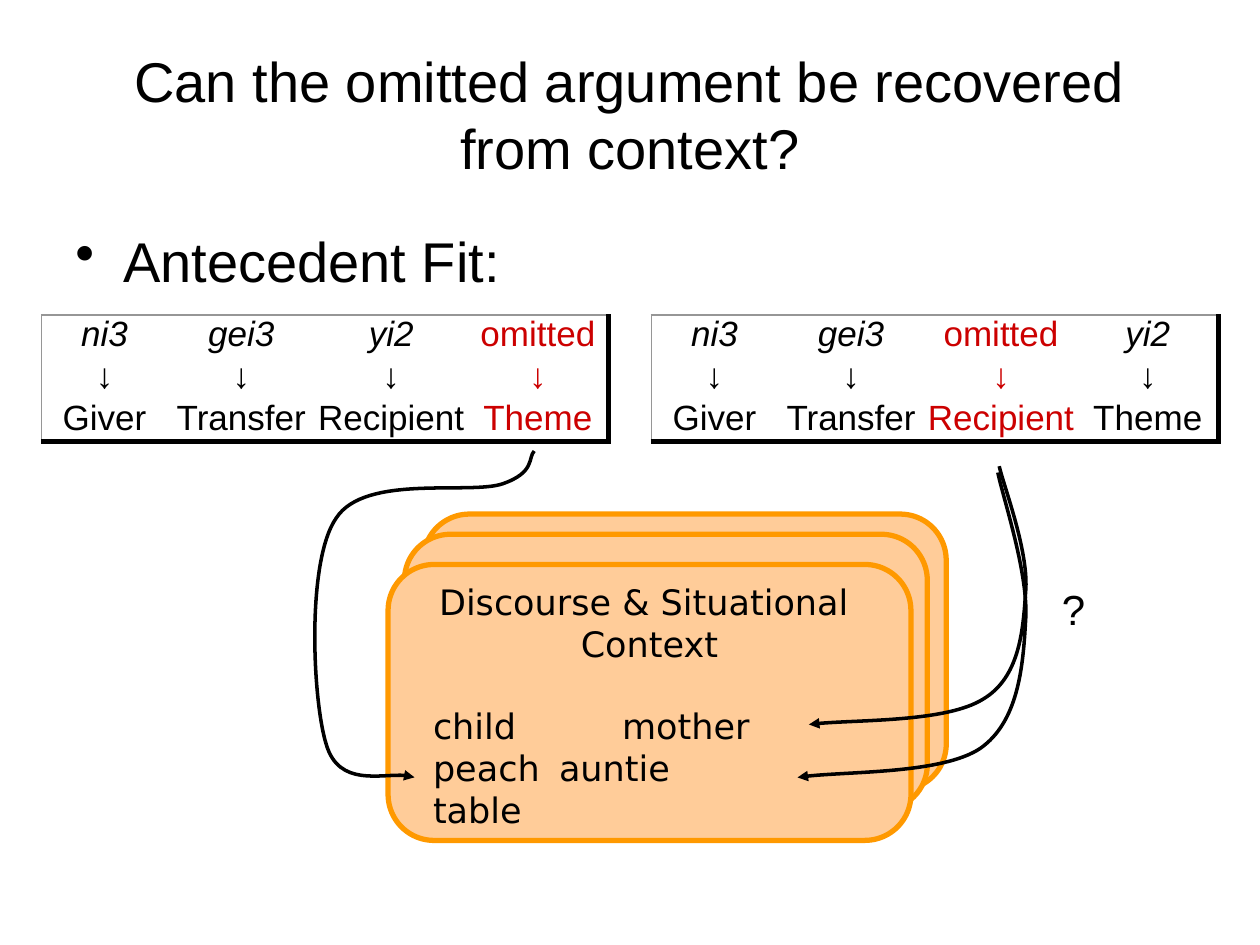
from dataclasses import dataclass

from lxml import etree
from pptx import Presentation
from pptx.dml.color import RGBColor
from pptx.enum.shapes import MSO_SHAPE as Shape
from pptx.enum.text import MSO_ANCHOR as Anchor, PP_ALIGN as Align
from pptx.oxml import parse_xml
from pptx.oxml.ns import nsdecls, qn
from pptx.util import Inches, Pt


@dataclass(frozen=True)
class Theme:
    black: str = "000000"
    red: str = "CC0000"
    gray: str = "969696"
    card: str = "FFCC99"
    card_edge: str = "FF9900"
    sans: str = "Arial"
    card_font: str = "DejaVu Sans"
    heading: int = 32
    question: int = 24
    body: int = 20


theme = Theme()


def write(paragraph, text, size, color=theme.black, name=theme.sans, italic=False):
    """Fill a paragraph with text; a vertical tab is a line break."""
    paragraph.text = text
    for run in paragraph.runs:
        font_format = {"size": Pt(size), "name": name, "italic": italic}
        for attribute, value in font_format.items():
            setattr(run.font, attribute, value)
        run.font.color.rgb = RGBColor.from_string(color)


def set_border(cell, side, position, border):
    """Draw one cell side, or hide it when border is None."""
    if border:
        color, width = border
        fill = f'<a:solidFill><a:srgbClr val="{color}"/></a:solidFill>'
    else:
        width, fill = 0, "<a:noFill/>"
    xml = f'<a:{side} {nsdecls("a")} w="{Pt(width)}">{fill}</a:{side}>'
    cell._tc.get_or_add_tcPr().insert(position, parse_xml(xml))


presentation = Presentation()
presentation.slide_width = Inches(10)
presentation.slide_height = Inches(7.5)
slide = presentation.slides.add_slide(presentation.slide_layouts[6])
shapes = slide.shapes

# Title, bullet line and question mark
labels = [
    ("Can the omitted argument be recovered from context?",
     (0.5, 0.3, 9, 1.2), theme.heading, Align.CENTER, Anchor.MIDDLE, True),
    ("Antecedent Fit:", (0.5, 1.75, 9, 0.75), theme.heading, Align.LEFT, Anchor.TOP, True),
    ("?", (8.33, 4.58, 0.39, 0.5), theme.question, Align.LEFT, Anchor.TOP, False),
]
for text, place, size, alignment, anchor, wrap in labels:
    box = shapes.add_textbox(*map(Inches, place))
    frame = box.text_frame
    frame.word_wrap = wrap
    frame.vertical_anchor = anchor
    paragraph = frame.paragraphs[0]
    paragraph.alignment = alignment
    write(paragraph, text, size)
    if text.startswith("Antecedent"):
        paragraph.space_before = Pt(3)
        properties = paragraph._p.get_or_add_pPr()
        properties.set("marL", str(Inches(0.38)))
        properties.set("indent", str(-Inches(0.38)))
        etree.SubElement(properties, qn("a:buChar")).set("char", "•")

# Word-to-role tables, each with one omitted argument
roles = ["Giver", "Transfer", "Recipient", "Theme"]
column_widths = [1, 1.17, 1.21, 1.12]
row_height = 0.31
thin, thick = (theme.gray, 1), (theme.black, 3)
for left, words in [
    (0.33, ["ni3", "gei3", "yi2", "omitted"]),
    (5.17, ["ni3", "gei3", "omitted", "yi2"]),
]:
    rows = [words, ["↓"] * len(roles), roles]
    table = shapes.add_table(
        len(rows), len(roles), Inches(left), Inches(2.5),
        Inches(sum(column_widths)), Inches(row_height * len(rows)),
    ).table
    table.first_row = table.horz_banding = False
    for column, width in zip(table.columns, column_widths):
        column.width = Inches(width)
    for i, row in enumerate(rows):
        table.rows[i].height = Inches(row_height)
        for j, text in enumerate(row):
            cell = table.cell(i, j)
            cell.fill.background()
            for side in ("left", "right", "top", "bottom"):
                setattr(cell, f"margin_{side}", 0)
            omitted = words[j] == "omitted"
            paragraph = cell.text_frame.paragraphs[0]
            paragraph.alignment = Align.CENTER
            write(paragraph, text, theme.body, theme.red if omitted else theme.black,
                  italic=i == 0 and not omitted)
            borders = {
                "lnL": thin if j == 0 else None,
                "lnR": thick if j == len(roles) - 1 else None,
                "lnT": thin if i == 0 else None,
                "lnB": thick if i == len(rows) - 1 else None,
            }
            for position, (side, border) in enumerate(borders.items()):
                set_border(cell, side, position, border)

# Stack of context cards; the front one carries the text
stack = shapes.add_group_shape()
for left, top in [(3.36, 4.08), (3.21, 4.24), (3.08, 4.48)]:
    card = stack.shapes.add_shape(
        Shape.ROUNDED_RECTANGLE, Inches(left), Inches(top), Inches(4.15), Inches(2.19))
    card.shadow.inherit = False
    card.fill.solid()
    card.fill.fore_color.rgb = RGBColor.from_string(theme.card)
    card.line.color.rgb = RGBColor.from_string(theme.card_edge)
    card.line.width = Pt(3)

frame = card.text_frame
frame_format = {
    "word_wrap": True, "vertical_anchor": Anchor.TOP, "margin_left": 0,
    "margin_right": 0, "margin_top": Inches(0.02), "margin_bottom": 0,
}
for attribute, value in frame_format.items():
    setattr(frame, attribute, value)
heading = frame.paragraphs[0]
heading.alignment = Align.CENTER
heading.space_after = Pt(23)
write(heading, "Discourse & Situational \vContext", theme.body, name=theme.card_font)
for text in ["child\t\tmother", "peach\tauntie", "table"]:
    paragraph = frame.add_paragraph()
    paragraph.alignment = Align.LEFT
    paragraph._p.get_or_add_pPr().set("marL", str(Inches(0.25)))
    write(paragraph, text, theme.body, name=theme.card_font)

# Curved arrows: a start point, then three Bézier points per segment
arrows = [
    [(4.24, 3.58), (4.19, 3.63), (4.25, 3.75), (3.99, 3.84),
     (3.73, 3.93), (2.9, 3.76), (2.67, 4.11), (2.43, 4.45), (2.48, 5.56),
     (2.59, 5.91), (2.69, 6.25), (3.14, 6.11), (3.29, 6.17)],
    [(7.93, 3.7), (7.97, 3.87), (8.17, 4.39), (8.14, 4.7), (8.12, 5.01),
     (8.09, 5.38), (7.8, 5.55), (7.51, 5.73), (6.71, 5.71), (6.42, 5.75)],
    [(7.92, 3.75), (7.96, 3.95), (8.17, 4.57), (8.14, 4.93), (8.12, 5.3),
     (8.08, 5.73), (7.78, 5.94), (7.48, 6.14), (6.64, 6.12), (6.33, 6.17)],
]
for points in arrows:
    start, *controls = [(Inches(x), Inches(y)) for x, y in points]
    builder = shapes.build_freeform(*start)
    builder.add_line_segments(controls, close=False)
    arrow = builder.convert_to_shape()
    arrow.shadow.inherit = False
    arrow.fill.background()
    arrow.line.color.rgb = RGBColor.from_string(theme.black)
    arrow.line.width = Pt(2)
    etree.SubElement(arrow.line._get_or_add_ln(), qn("a:tailEnd")).set("type", "triangle")

    # Gather every three line segments into one cubic curve
    lines = list(arrow._element.iter(qn("a:lnTo")))
    outline = lines[0].getparent()
    for i in range(0, len(lines), 3):
        curve = etree.SubElement(outline, qn("a:cubicBezTo"))
        for line in lines[i:i + 3]:
            curve.append(line[0])
            outline.remove(line)

presentation.save("out.pptx")
